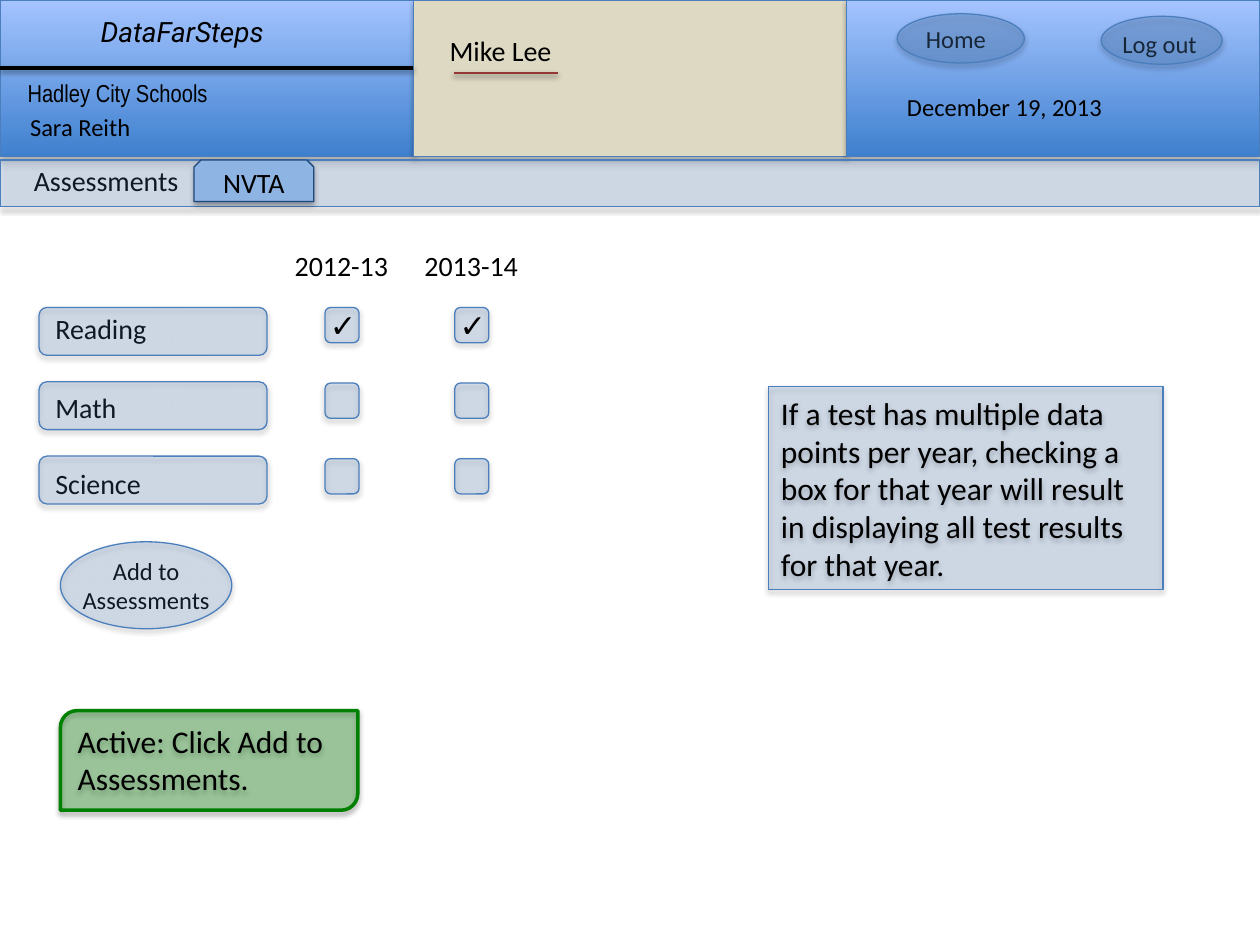
import dataclasses

import lxml.etree
import pptx
import pptx.dml.color
import pptx.enum.shapes
import pptx.enum.text
import pptx.oxml.ns
import pptx.util

Inches = pptx.util.Inches
Shape = pptx.enum.shapes.MSO_SHAPE
Align = pptx.enum.text.PP_ALIGN
Anchor = pptx.enum.text.MSO_ANCHOR
qn = pptx.oxml.ns.qn


@dataclasses.dataclass(frozen=True)
class Theme:
    """Colours, fonts and type sizes of the slide."""
    ink: str = "000000"
    edge: str = "4B7EBC"
    tint: str = "4F81BD"
    deep: str = "3F80CE"
    pale: str = "A4C4FF"
    sand: str = "DDD9C3"
    tab: str = "8EB4E3"
    navy: str = "1F497D"
    red: str = "953735"
    green: str = "008000"
    font: str = "Calibri"
    narrow: str = "Arial Narrow"
    brand: str = "Roboto"
    mark: str = "Arial"
    small: int = 14
    base: int = 16
    large: int = 18


THEME = Theme()


def rgb(code):
    """Turn a hex code into a colour."""
    return pptx.dml.color.RGBColor.from_string(code)


def shade(item, alpha=35, dist=1.8):
    """Give a shape or connector a soft shadow below it."""
    props = item._element.spPr
    for old in props.findall(qn("a:effectLst")):
        props.remove(old)
    host = lxml.etree.SubElement(props, qn("a:effectLst"))
    outer = lxml.etree.SubElement(
        host, qn("a:outerShdw"), blurRad=str(pptx.util.Pt(3.1)),
        dist=str(pptx.util.Pt(dist)), dir="5400000", rotWithShape="0")
    tone = lxml.etree.SubElement(outer, qn("a:srgbClr"), val=THEME.ink)
    lxml.etree.SubElement(tone, qn("a:alpha"), val=str(alpha * 1000))


def write(item, lines, size, font=THEME.font, align=Align.LEFT,
          anchor=Anchor.TOP, inset=None, wrap=True, italic=None):
    """Write lines of text into a shape or text box."""
    frame = item.text_frame
    frame.word_wrap = wrap
    frame.vertical_anchor = anchor
    if inset is not None:
        frame.margin_left = frame.margin_right = Inches(inset)
        frame.margin_top = frame.margin_bottom = Inches(inset)
    for i, line in enumerate(lines.split("\n")):
        para = frame.paragraphs[0] if i == 0 else frame.add_paragraph()
        para.alignment = align
        run = para.add_run()
        run.text = line
        run.font.size = pptx.util.Pt(size)
        run.font.name = font
        run.font.italic = italic
        run.font.color.rgb = rgb(THEME.ink)


def label(slide, box, lines, size=THEME.base, **style):
    """Place a text box."""
    item = slide.shapes.add_textbox(*map(Inches, box))
    write(item, lines, size, **style)


def panel(slide, kind, box, fill=THEME.tint, alpha=20, edge=THEME.edge, width=0.75):
    """Place a filled, outlined and shaded shape."""
    item = slide.shapes.add_shape(kind, *map(Inches, box))
    item.fill.solid()
    item.fill.fore_color.rgb = rgb(fill)
    if alpha < 100:
        tone = item._element.spPr.find(qn("a:solidFill"))[0]
        lxml.etree.SubElement(tone, qn("a:alpha"), val=str(alpha * 1000))
    item.line.color.rgb = rgb(edge)
    item.line.width = pptx.util.Pt(width)
    shade(item)
    return item


def blend(item):
    """Fill a shape from deep at its foot to pale at its head."""
    item.fill.gradient()
    item.fill.gradient_angle = 90
    for stop, tone, spot in zip(item.fill.gradient_stops, (THEME.deep, THEME.pale), (0, 1)):
        stop.color.rgb = rgb(tone)
        stop.position = spot


def rule(slide, left, top, width, tone, weight):
    """Draw a shaded level line."""
    line = slide.shapes.add_connector(
        pptx.enum.shapes.MSO_CONNECTOR.STRAIGHT,
        Inches(left), Inches(top), Inches(left + width), Inches(top))
    line.line.color.rgb = rgb(tone)
    line.line.width = pptx.util.Pt(weight)
    shade(line, 38, 1.6)


def header(slide, box):
    """Place the banner with school, student and account areas."""
    left, top, width, height = box
    side = 3.28
    mid, right = left + side, left + width - side
    blend(panel(slide, Shape.RECTANGLE, (left, top, side, height), alpha=100))
    panel(slide, Shape.RECTANGLE, (mid, top, right - mid, height), THEME.sand, 100)
    blend(panel(slide, Shape.RECTANGLE, (right, top, side, height), alpha=100))
    label(slide, (left + 0.14, top + 0.84, 1.37, 0.34), "Sara Reith", THEME.small)
    label(slide, (right + 0.38, top + 0.68, 1.87, 0.34), "December 19, 2013", THEME.small)
    label(slide, (right + 2.09, top + 0.18, 0.9, 0.34), "Log out", THEME.small)
    panel(slide, Shape.OVAL, (right + 2.02, top + 0.13, 0.96, 0.38), alpha=30)
    label(slide, (right + 0.53, top + 0.14, 0.78, 0.34), "Home", THEME.small)
    panel(slide, Shape.OVAL, (right + 0.4, top + 0.11, 1.01, 0.39), alpha=30)
    label(slide, (left + 0.12, top + 0.57, 1.89, 0.34), "Hadley City Schools",
          THEME.small, font=THEME.narrow)
    label(slide, (left + 0.7, top + 0.07, 1.89, 0.37), "DataFarSteps",
          font=THEME.brand, italic=True)
    rule(slide, left, top + 0.54, side, THEME.ink, 2)
    label(slide, (mid + 0.19, top + 0.22, 1.33, 0.37), "Mike Lee")
    rule(slide, mid + 0.32, top + 0.58, 0.83, THEME.red, 1.5)


def tabs(slide, box):
    """Place the tab bar with its open tab."""
    left, top, _, _ = box
    label(slide, (left + 0.17, top - 0.02, 1.95, 0.37), "Assessments")
    panel(slide, Shape.RECTANGLE, box)
    tab = panel(slide, Shape.SNIP_2_SAME_RECTANGLE, (left + 1.54, top, 0.95, 0.33),
                THEME.tab, 100, THEME.navy)
    write(tab, "NVTA", THEME.base, align=Align.CENTER, anchor=Anchor.MIDDLE)


def grid(slide, box):
    """Place the subjects against the years with their check boxes."""
    left, top, _, _ = box
    first = top + 0.47
    cols = [left + 2.27 + 1.03 * i for i in range(2)]
    style = dict(anchor=Anchor.MIDDLE, inset=0.05)
    for col, year in zip(cols, ("2012-13", "2013-14")):
        label(slide, (col - 0.37, top, 1, 0.27), year, align=Align.CENTER, **style)
    for i, (name, drop) in enumerate((("Reading", 0), ("Math", 0.04), ("Science", 0.05))):
        row = first + 0.59 * i
        label(slide, (left + 0.08, row + drop, 1.7, 0.33), name, **style)
        panel(slide, Shape.ROUNDED_RECTANGLE, (left, row, 1.81, 0.38))
        for col in cols:
            panel(slide, Shape.ROUNDED_RECTANGLE, (col, first + 0.6 * i, 0.27, 0.28))
    for col in cols:
        label(slide, (col - 0.06, first - 0.06, 0.4, 0.4), "✓", THEME.large,
              font=THEME.mark, wrap=False)


def button(slide, box):
    """Place the oval button over its caption."""
    left, top, width, height = box
    label(slide, (left + 0.06, top + 0.11, width - 0.12, height - 0.11),
          "Add to\nAssessments", THEME.small, align=Align.CENTER, inset=0, wrap=False)
    panel(slide, Shape.OVAL, box)


def hint(slide, box):
    """Place the green next-step note."""
    item = panel(slide, Shape.ROUND_2_DIAG_RECTANGLE, box, THEME.green, 32, THEME.green, 2)
    write(item, "Active: Click Add to Assessments.", THEME.large)


def note(slide, box):
    """Place the note on tests with many data points."""
    item = panel(slide, Shape.RECTANGLE, box)
    write(item, "If a test has multiple data points per year, checking a box for that "
          "year will result in displaying all test results for that year.",
          THEME.large, anchor=Anchor.MIDDLE)


def main():
    """Build the slide and save it."""
    deck = pptx.Presentation()
    deck.slide_width, deck.slide_height = Inches(10), Inches(7.5)
    slide = deck.slides.add_slide(deck.slide_layouts[6])
    header(slide, (0, 0, 10, 1.24))
    grid(slide, (0.31, 1.97, 3.57, 2.03))
    button(slide, (0.48, 4.3, 1.36, 0.69))
    tabs(slide, (0, 1.27, 10, 0.37))
    hint(slide, (0.48, 5.64, 2.36, 0.79))
    note(slide, (6.1, 3.07, 3.13, 1.61))
    deck.save("out.pptx")


if __name__ == "__main__":
    main()
